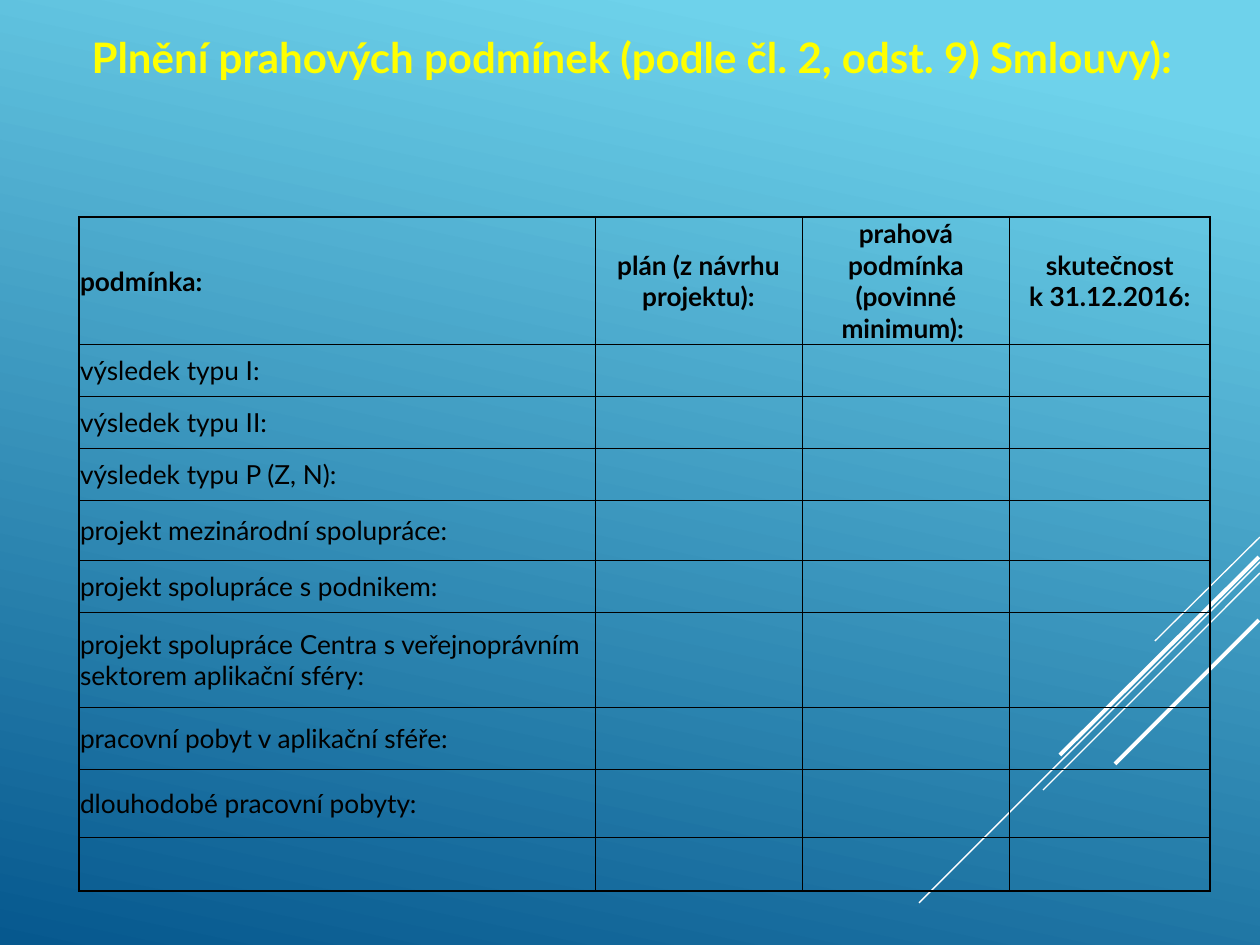
"""Build the slide with the table of threshold conditions."""
from lxml import etree
from pptx import Presentation
from pptx.dml.color import RGBColor
from pptx.enum.shapes import MSO_CONNECTOR
from pptx.enum.text import MSO_ANCHOR, MSO_AUTO_SIZE, PP_ALIGN
from pptx.oxml.ns import qn
from pptx.util import Pt

STRAIGHT = MSO_CONNECTOR.STRAIGHT
TOP, MIDDLE = MSO_ANCHOR.TOP, MSO_ANCHOR.MIDDLE
LEFT, CENTER = PP_ALIGN.LEFT, PP_ALIGN.CENTER
NO_FIT = MSO_AUTO_SIZE.NONE

YELLOW = RGBColor(0xFF, 0xFF, 0x00)
BLACK = RGBColor(0x00, 0x00, 0x00)
WHITE = RGBColor(0xFF, 0xFF, 0xFF)
SKY = RGBColor(0x6E, 0xD2, 0xEB)
NAVY = RGBColor(0x06, 0x58, 0x8E)
FONT = "Lato"
PX = 914400 // 126

TITLE = "Plnění prahových podmínek (podle čl. 2, odst. 9) Smlouvy):"
TITLE_BOX = (79, 20, 1139, 125)
HEADER = [
    "podmínka:",
    "plán (z návrhu projektu):",
    "prahová podmínka (povinné minimum): ",
    "skutečnost\nk 31.12.2016:",
]
CONDITIONS = [
    "výsledek typu I:",
    "výsledek typu II:",
    "výsledek typu P (Z, N):",
    "projekt mezinárodní spolupráce:",
    "projekt spolupráce s podnikem:",
    "projekt spolupráce Centra s veřejnoprávním sektorem aplikační sféry:",
    "pracovní pobyt v aplikační sféře:",
    "dlouhodobé pracovní pobyty:",
    "",
]
TABLE_AT = (79, 217)
COL_WIDTHS = [516, 207, 208, 200]
ROW_HEIGHTS = [127, 52, 52, 52, 60, 52, 95, 62, 69, 53]
STRIPES = [
    (1260, 537, 1155, 641, 0.75),
    (1260, 562, 919, 903, 0.75),
    (1260, 573, 1043, 790, 0.75),
    (1259, 557, 1060, 755, 2.25),
    (1259, 620, 1115, 764, 2.25),
]


def px(*values):
    return [v * PX for v in values]


def add_run(p, text, size, color, bold):
    r = p.add_run()
    r.text = text
    r.font.name = FONT
    r.font.size = Pt(size)
    r.font.bold = bold
    r.font.color.rgb = color


def set_borders(cell, widths):
    tcPr = cell._tc.get_or_add_tcPr()
    for i, (side, width) in enumerate(widths.items()):
        ln = etree.Element(qn(f"a:ln{side}"), w=str(Pt(width)))
        fill = etree.SubElement(ln, qn("a:solidFill"))
        etree.SubElement(fill, qn("a:srgbClr"), val=str(BLACK))
        tcPr.insert(i, ln)


def add_background(s):
    fill = s.background.fill
    fill.gradient()
    fill.gradient_angle = 258
    for stop, color, position in zip(fill.gradient_stops, (SKY, NAVY), (0.1, 1)):
        stop.color.rgb = color
        stop.position = position


def add_stripes(s):
    for x1, y1, x2, y2, width in STRIPES:
        line = s.shapes.add_connector(STRAIGHT, *px(x1, y1, x2, y2))
        line.line.color.rgb = WHITE
        line.line.width = Pt(width)
        etree.SubElement(line._element.spPr, qn("a:effectLst"))


def add_title(s):
    sp = s.shapes.title
    sp.left, sp.top, sp.width, sp.height = px(*TITLE_BOX)
    tf = sp.text_frame
    tf.word_wrap = True
    tf.auto_size = NO_FIT
    tf.vertical_anchor = TOP
    p = tf.paragraphs[0]
    p.alignment = LEFT
    p.line_spacing = 1.1
    p.space_before = p.space_after = Pt(3)
    add_run(p, TITLE, 24, YELLOW, True)


def add_conditions(s):
    rows = [HEADER] + [[text, "", "", ""] for text in CONDITIONS]
    size = px(sum(COL_WIDTHS), sum(ROW_HEIGHTS))
    table = s.shapes.add_table(len(rows), len(HEADER), *px(*TABLE_AT), *size).table
    table.first_row = table.horz_banding = False
    for col, width in zip(table.columns, COL_WIDTHS):
        col.width = width * PX
    for row, height in zip(table.rows, ROW_HEIGHTS):
        row.height = height * PX
    last_row, last_col = len(rows) - 1, len(HEADER) - 1
    for i, row in enumerate(rows):
        for j, text in enumerate(row):
            cell = table.cell(i, j)
            cell.fill.background()
            cell.vertical_anchor = MIDDLE
            cell.margin_left = cell.margin_right = cell.margin_top = PX
            cell.margin_bottom = 0
            set_borders(cell, {
                "L": 1 if j == 0 else 0.5,
                "R": 1 if j == last_col else 0.5,
                "T": 1 if i == 0 else 0.5,
                "B": 1 if i == last_row else 0.5,
            })
            tf = cell.text_frame
            for k, part in enumerate(text.splitlines()):
                p = tf.add_paragraph() if k else tf.paragraphs[0]
                p.alignment = CENTER if j else LEFT
                add_run(p, part, 15, BLACK, i == 0)


def main():
    prs = Presentation()
    prs.slide_width, prs.slide_height = px(1260, 945)
    s = prs.slides.add_slide(prs.slide_layouts[5])
    add_background(s)
    add_stripes(s)
    add_title(s)
    add_conditions(s)
    prs.save("out.pptx")


if __name__ == "__main__":
    main()
